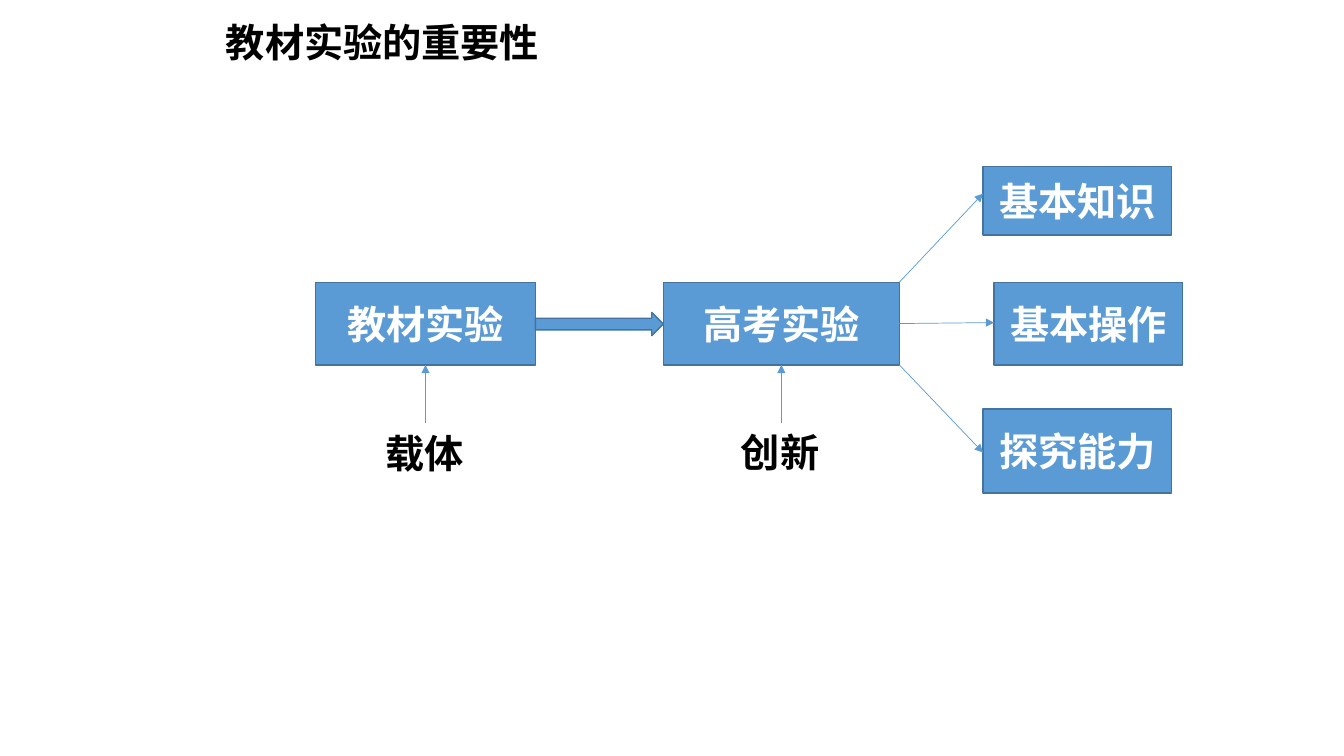
from dataclasses import dataclass

from lxml import etree
from pptx import Presentation
from pptx import util as u
from pptx.dml import color
from pptx.enum import shapes, text
from pptx.oxml import ns

PX = 9144


@dataclass(frozen=True)
class Theme:
    fill: str = "5B9BD5"
    edge: str = "43739E"
    dark: str = "000000"
    light: str = "FFFFFF"
    font: str = "Arial"
    size: int = 28
    rim: float = 1
    thin: float = 0.5


@dataclass(frozen=True)
class Area:
    left: int
    top: int
    width: int
    height: int

    def emu(self) -> list[int]:
        return [n * PX for n in (self.left, self.top, self.width, self.height)]


@dataclass(frozen=True)
class Label:
    words: str
    area: Area


@dataclass(frozen=True)
class Arrow:
    x1: int
    y1: int
    x2: int
    y2: int


THEME = Theme()

TITLE = Label("教材实验的重要性", Area(214, 13, 336, 57))

BOXES = [
    Label("教材实验", Area(313, 280, 218, 82)),
    Label("高考实验", Area(658, 280, 234, 82)),
    Label("基本知识", Area(975, 165, 187, 68)),
    Label("基本操作", Area(986, 280, 187, 82)),
    Label("探究能力", Area(975, 406, 187, 83)),
]

NOTES = [
    Label("载体", Area(372, 421, 99, 57)),
    Label("创新", Area(725, 420, 99, 57)),
]

BLOCK = Area(531, 310, 127, 23)

ARROWS = [
    Arrow(892, 280, 975, 192),
    Arrow(892, 321, 986, 320),
    Arrow(892, 362, 975, 449),
    Arrow(422, 420, 422, 362),
    Arrow(775, 420, 775, 362),
]


def rgb(code: str) -> color.RGBColor:
    return color.RGBColor.from_string(code)


def write(frame, words: str, tint: str, align) -> None:
    para = frame.paragraphs[0]
    para.alignment = align
    run = para.add_run()
    run.text = words
    font = run.font
    font.name = THEME.font
    font.size = u.Pt(THEME.size)
    font.bold = True
    font.color.rgb = rgb(tint)
    east = etree.SubElement(font._element, ns.qn("a:ea"))
    east.set("typeface", THEME.font)


def fit(frame, words: str) -> None:
    frame.word_wrap = False
    frame.auto_size = text.MSO_AUTO_SIZE.SHAPE_TO_FIT_TEXT
    frame.vertical_anchor = text.MSO_ANCHOR.TOP
    write(frame, words, THEME.dark, text.PP_ALIGN.LEFT)


def head(slide, label: Label) -> None:
    title = slide.shapes.title
    title.left, title.top, title.width, title.height = label.area.emu()
    fit(title.text_frame, label.words)


def solid(slide, kind, area: Area):
    shape = slide.shapes.add_shape(kind, *area.emu())
    shape.shadow.inherit = False
    shape.fill.solid()
    shape.fill.fore_color.rgb = rgb(THEME.fill)
    shape.line.color.rgb = rgb(THEME.edge)
    shape.line.width = u.Pt(THEME.rim)
    return shape


def box(slide, label: Label) -> None:
    frame = solid(slide, shapes.MSO_SHAPE.RECTANGLE, label.area).text_frame
    frame.word_wrap = True
    frame.vertical_anchor = text.MSO_ANCHOR.MIDDLE
    write(frame, label.words, THEME.light, text.PP_ALIGN.CENTER)


def note(slide, label: Label) -> None:
    fit(slide.shapes.add_textbox(*label.area.emu()).text_frame, label.words)


def link(slide, arrow: Arrow) -> None:
    ends = [n * PX for n in (arrow.x1, arrow.y1, arrow.x2, arrow.y2)]
    line = slide.shapes.add_connector(shapes.MSO_CONNECTOR.STRAIGHT, *ends)
    line.line.color.rgb = rgb(THEME.fill)
    line.line.width = u.Pt(THEME.thin)
    props = line._element.spPr
    tip = etree.SubElement(props.find(ns.qn("a:ln")), ns.qn("a:tailEnd"))
    tip.set("type", "triangle")
    etree.SubElement(props, ns.qn("a:effectLst"))


def main() -> None:
    deck = Presentation()
    deck.slide_width, deck.slide_height = 1333 * PX, 750 * PX
    slide = deck.slides.add_slide(deck.slide_layouts[5])
    head(slide, TITLE)
    for label in BOXES:
        box(slide, label)
    solid(slide, shapes.MSO_SHAPE.RIGHT_ARROW, BLOCK)
    for arrow in ARROWS:
        link(slide, arrow)
    for label in NOTES:
        note(slide, label)
    deck.save("out.pptx")


if __name__ == "__main__":
    main()
